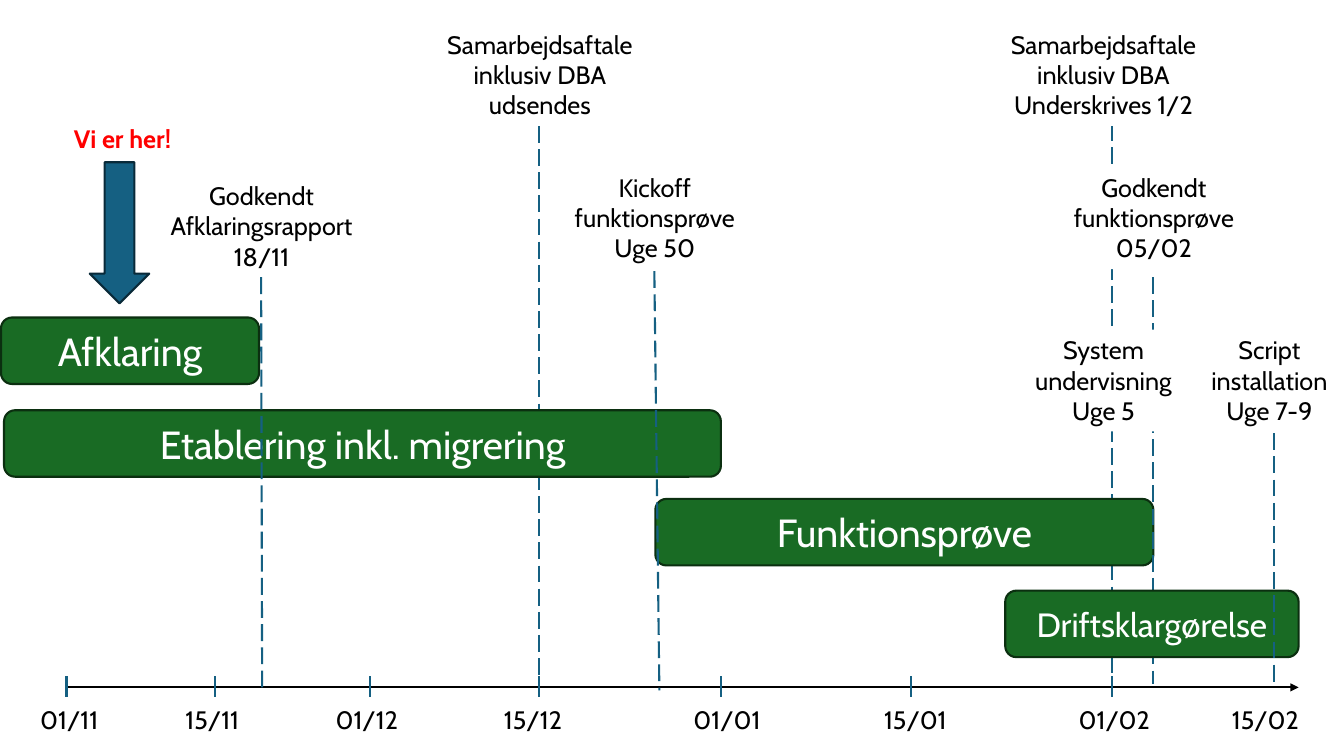
from lxml import etree
from pptx import Presentation
from pptx.dml.color import RGBColor
from pptx.enum.dml import MSO_LINE
from pptx.enum.shapes import MSO_CONNECTOR, MSO_SHAPE
from pptx.enum.text import MSO_ANCHOR, MSO_AUTO_SIZE, PP_ALIGN
from pptx.oxml.ns import qn
from pptx.util import Emu, Pt

PX = 9144
FONT = "Cabin"
BLACK = RGBColor(0x00, 0x00, 0x00)
WHITE = RGBColor(0xFF, 0xFF, 0xFF)
RED = RGBColor(0xFF, 0x00, 0x00)
GREEN = RGBColor(0x19, 0x6B, 0x24)
DARK_GREEN = RGBColor(0x0B, 0x2F, 0x10)
BLUE = RGBColor(0x15, 0x60, 0x82)
DARK_BLUE = RGBColor(0x09, 0x2A, 0x39)

AXIS_Y = 682
BACK_LINES = [(1103, 123, 1103, 680), (535, 125, 535, 682)]
FRONT_LINES = [(259, 275, 260, 682), (1144, 275, 1144, 679), (649, 269, 654, 685)]
SCRIPT_LINE = (1264, 407, 1264, 680)
BARS = [
    ("Afklaring", 1, 315, 256),
    ("Etablering inkl. migrering", 4, 407, 711),
    ("Funktionsprøve", 650, 495, 494),
]
TICKS = [66, 213, 367, 535, 715, 904, 1103]
DATES = [
    ("01/11", 30), ("15/11", 174), ("01/12", 323), ("15/12", 490),
    ("01/01", 678), ("15/01", 867), ("01/02", 1060), ("15/02", 1212),
]
MILESTONES = [
    (["Godkendt Afklaringsrapport", "18/11"], 151, 174, 217, None),
    (["Godkendt funktionsprøve", "05/02"], 1036, 166, 217, WHITE),
    (["Kickoff", "funktionsprøve", "Uge 50"], 541, 166, 217, None),
    (["Samarbejdsaftale inklusiv DBA", "udsendes"], 427, 24, 217, None),
    (["Samarbejdsaftale inklusiv DBA", "Underskrives 1/2"], 986, 24, 217, WHITE),
    (["System undervisning", "Uge 5"], 1013, 327, 163, WHITE),
    (["Script installation", "Uge 7-9"], 1188, 327, 142, WHITE),
]


def px(*values):
    return [Emu(v * PX) for v in values]


def write(tf, lines, size=18, color=BLACK, bold=False, align=PP_ALIGN.CENTER,
          anchor=MSO_ANCHOR.TOP):
    tf.word_wrap = True
    tf.vertical_anchor = anchor
    for i, line in enumerate(lines):
        p = tf.paragraphs[0] if i == 0 else tf.add_paragraph()
        p.alignment = align
        r = p.add_run()
        r.text = line
        r.font.name = FONT
        r.font.size = Pt(size)
        r.font.bold = bold
        r.font.color.rgb = color


def add_label(s, lines, x, y, w, h=40, fill=None, **fmt):
    sp = s.shapes.add_textbox(*px(x, y, w, h))
    if fill is not None:
        sp.fill.solid()
        sp.fill.fore_color.rgb = fill
    write(sp.text_frame, lines, **fmt)
    sp.text_frame.auto_size = MSO_AUTO_SIZE.SHAPE_TO_FIT_TEXT


def add_filled(s, kind, x, y, w, h, fill, outline):
    sp = s.shapes.add_shape(kind, *px(x, y, w, h))
    sp.shadow.inherit = False
    sp.fill.solid()
    sp.fill.fore_color.rgb = fill
    sp.line.color.rgb = outline
    sp.line.width = Pt(1.5)
    return sp


def add_bar(s, text, x, y, w, size=28):
    sp = add_filled(s, MSO_SHAPE.ROUNDED_RECTANGLE, x, y, w, 66, GREEN, DARK_GREEN)
    write(sp.text_frame, [text], size=size, color=WHITE, anchor=MSO_ANCHOR.MIDDLE)


def add_line(s, x1, y1, x2, y2, color=BLUE, dashed=False, arrow=False):
    c = s.shapes.add_connector(MSO_CONNECTOR.STRAIGHT, *px(x1, y1, x2, y2))
    c.line.color.rgb = color
    c.line.width = Pt(1.5)
    if dashed:
        c.line.dash_style = MSO_LINE.LONG_DASH
    if arrow:
        etree.SubElement(c.line._get_or_add_ln(), qn("a:tailEnd"), type="triangle")
    etree.SubElement(c._element.spPr, qn("a:effectLst"))


def add_axis(s):
    add_line(s, 66, AXIS_Y, 1288, AXIS_Y, color=BLACK, arrow=True)
    for x in TICKS:
        add_line(s, x, AXIS_Y - 11, x, AXIS_Y + 9)
    for text, x in DATES:
        add_label(s, [text], x, 694, 100, align=PP_ALIGN.LEFT)


def main():
    prs = Presentation()
    prs.slide_width, prs.slide_height = px(1333, 750)
    s = prs.slides.add_slide(prs.slide_layouts[6])

    for ends in BACK_LINES:
        add_line(s, *ends, dashed=True)
    for bar in BARS:
        add_bar(s, *bar)
    add_filled(s, MSO_SHAPE.DOWN_ARROW, 89, 161, 59, 140, BLUE, DARK_BLUE)
    add_label(s, ["Vi er her!"], 13, 117, 217, color=RED, bold=True)
    add_axis(s)
    for ends in FRONT_LINES:
        add_line(s, *ends, dashed=True)
    add_bar(s, "Driftsklargørelse", 997, 586, 291, size=24)
    add_line(s, *SCRIPT_LINE, dashed=True)
    for lines, x, y, w, fill in MILESTONES:
        add_label(s, lines, x, y, w, h=101, fill=fill)

    prs.save("out.pptx")


if __name__ == "__main__":
    main()
